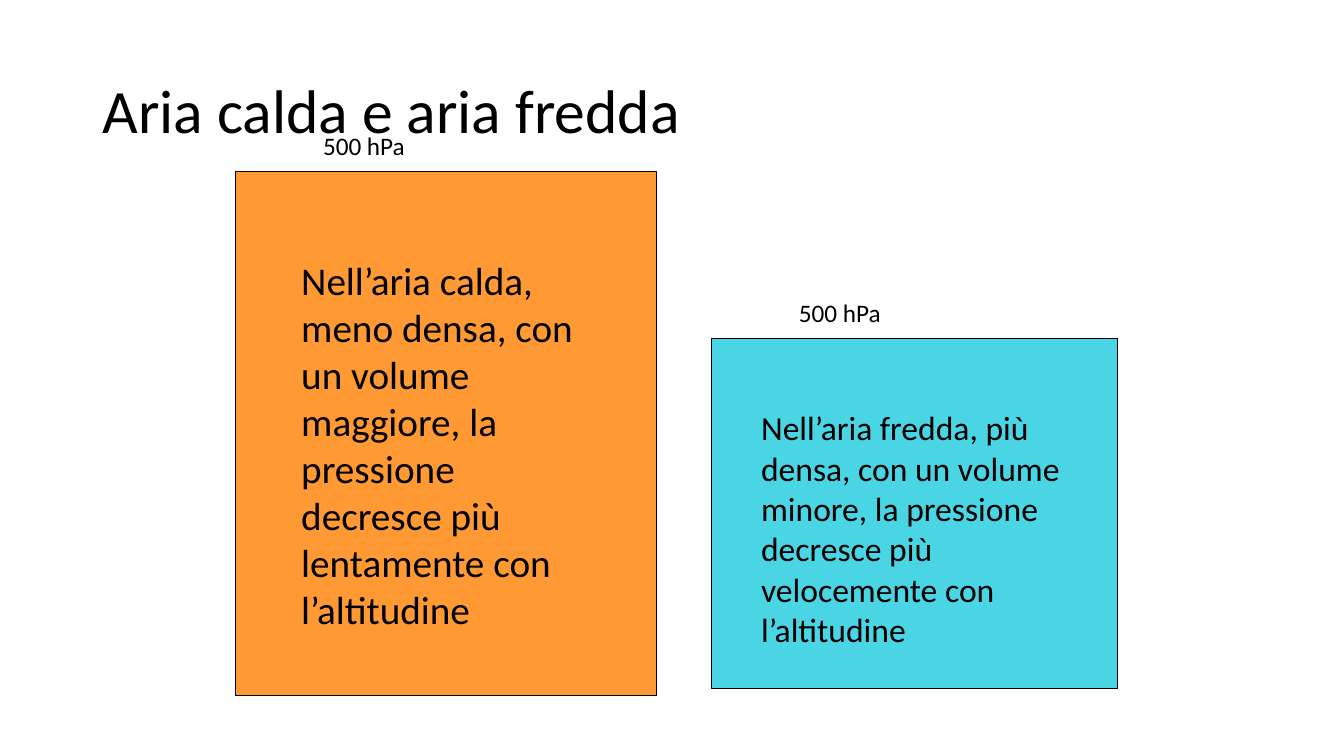
from dataclasses import dataclass

from pptx import Presentation
from pptx import util as u
from pptx.dml.color import RGBColor
from pptx.enum import shapes, text


@dataclass(frozen=True)
class Theme:
    font: str = "Calibri"
    ink: RGBColor = RGBColor(0x00, 0x00, 0x00)
    warm: RGBColor = RGBColor(0xFF, 0x99, 0x33)
    cold: RGBColor = RGBColor(0x4A, 0xD5, 0xE4)
    title_size: int = 44
    warm_size: int = 28
    cold_size: int = 24
    label_size: int = 18
    outline: float = 0.75


theme = Theme()
deck = Presentation()
deck.slide_width = u.Inches(13.33)
deck.slide_height = u.Inches(7.5)
page = deck.slides.add_slide(deck.slide_layouts[6])


def area(left, top, width, height):
    """Turn percentages of the slide's width and height into lengths."""
    across, down = deck.slide_width / 100, deck.slide_height / 100
    return (u.Emu(round(left * across)), u.Emu(round(top * down)),
            u.Emu(round(width * across)), u.Emu(round(height * down)))


def add_text(words, place, size, wrap=True):
    box = page.shapes.add_textbox(*area(*place))
    frame = box.text_frame
    frame.word_wrap = wrap
    para = frame.paragraphs[0]
    para.text = words
    para.font.name = theme.font
    para.font.size = u.Pt(size)
    para.font.color.rgb = theme.ink
    return frame


title = add_text("Aria calda e aria fredda", (6.9, 5.33, 86.27, 19.33), theme.title_size)
title.vertical_anchor = text.MSO_ANCHOR.MIDDLE
title.paragraphs[0].line_spacing = 0.9

# Each air column: its area, fill, explanation, explanation area and type size
air_columns = [
    ((17.55, 22.67, 31.28, 69.33), theme.warm,
     "Nell’aria calda, meno densa, con un volume maggiore, "
     "la pressione decresce più lentamente con l’altitudine",
     (21.68, 33.2, 23.18, 51.6), theme.warm_size),
    ((52.96, 44.8, 30.16, 46.27), theme.cold,
     "Nell’aria fredda, più densa, con un volume minore, "
     "la pressione decresce più velocemente con l’altitudine",
     (55.89, 53.2, 24.83, 33.6), theme.cold_size),
]
label_indent, label_rise = 5.75, 6.07
label_width, label_height = 7.65, 5.33

for place, fill, explanation, explanation_place, size in air_columns:
    column = page.shapes.add_shape(shapes.MSO_SHAPE.RECTANGLE, *area(*place))
    column.shadow.inherit = False
    column.fill.solid()
    column.fill.fore_color.rgb = fill
    column.line.color.rgb = theme.ink
    column.line.width = u.Pt(theme.outline)

    add_text(explanation, explanation_place, size)

    left, top = place[:2]
    add_text("500 hPa", (left + label_indent, top - label_rise, label_width, label_height),
             theme.label_size, wrap=False)

deck.save("out.pptx")
